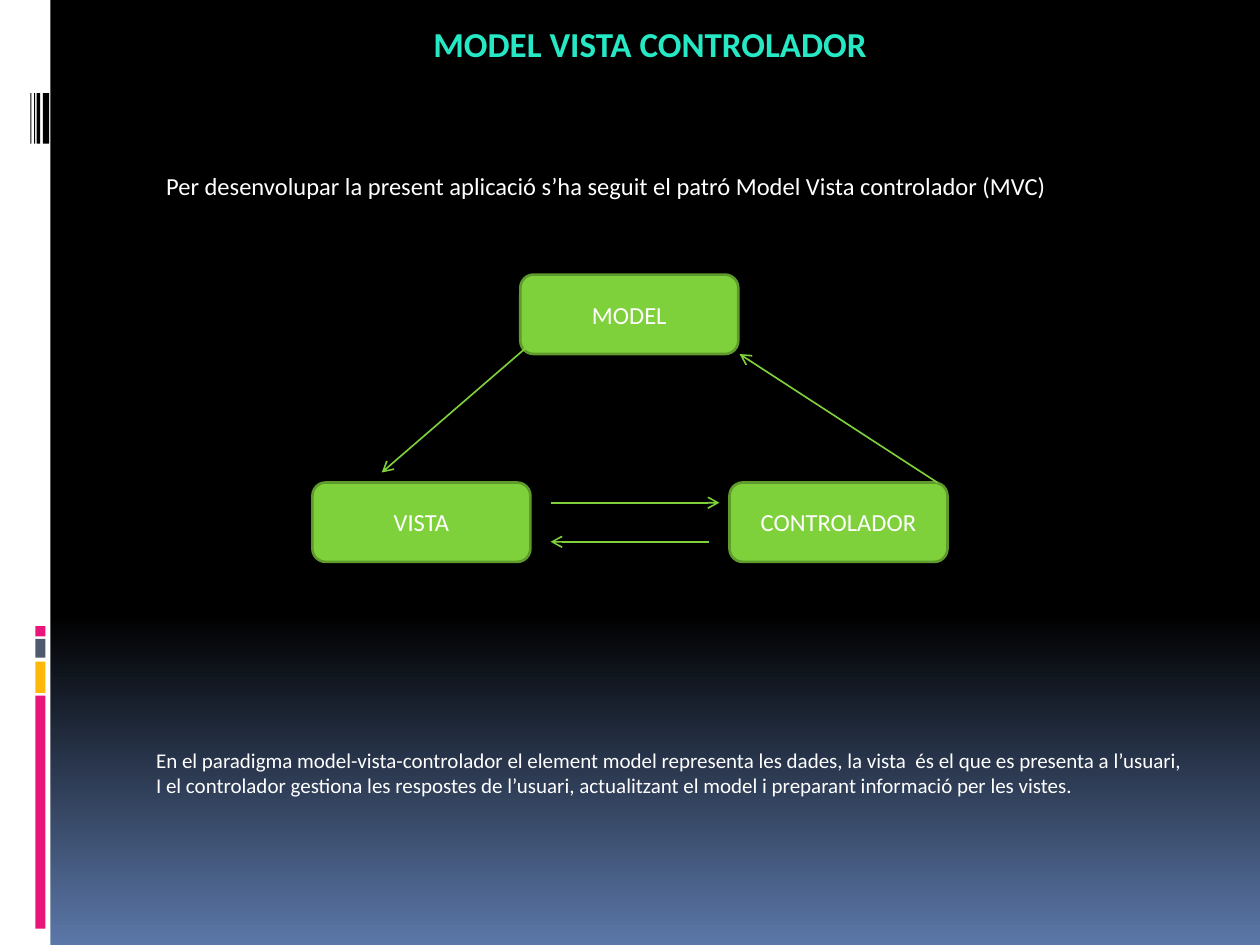
"""Builds the Model-View-Controller slide on a grid of 100 columns by 75 rows."""
from dataclasses import dataclass

from pptx import Presentation
from pptx import util as u
from pptx.dml.color import RGBColor
from pptx.enum import shapes, text
from pptx.oxml.ns import qn
from lxml import etree

CELL = u.Inches(0.1)
COLORS = {
    "black": "000000", "white": "FFFFFF", "dusk": "5B77A8", "pink": "EA157A",
    "amber": "FEB80A", "slate": "4E5B6F", "mint": "26E8C5",
    "green": "7FD13B", "moss": "5E9B2C",
}


@dataclass(frozen=True)
class Area:
    col: float
    row: float
    cols: float
    rows: float

    def place(self) -> tuple[int, ...]:
        return tuple(grid(n) for n in (self.col, self.row, self.cols, self.rows))


@dataclass(frozen=True)
class Stripe:
    area: Area
    color: str


@dataclass(frozen=True)
class Component:
    label: str
    col: float
    row: float


@dataclass(frozen=True)
class Flow:
    start: tuple[float, float]
    end: tuple[float, float]


STRIPES = [
    Stripe(Area(0, 0, 4, 75), "white"),
    *(Stripe(Area(2.8, row, 0.8, rows), color) for row, rows, color in (
        (55.2, 18.5, "pink"), (52.5, 2.5, "amber"),
        (50.7, 1.5, "slate"), (49.7, 0.8, "pink"))),
    *(Stripe(Area(col, 7.4, cols, 4), "black") for col, cols in (
        (3.4, 0.5), (2.9, 0.3), (2.7, 0.1), (2.4, 0.1))),
]
COMPONENTS = [
    Component("MODEL", 41.3, 21.8),
    Component("VISTA", 24.8, 38.3),
    Component("CONTROLADOR", 57.9, 38.3),
]
FLOWS = [
    Flow((42.1, 27.3), (30.3, 37.5)),
    Flow((74.4, 38.3), (58.7, 28.1)),
    Flow((43.7, 39.9), (57.1, 39.9)),
    Flow((56.3, 43), (43.7, 43)),
]
INTRO = ["Per desenvolupar la present aplicació s’ha seguit el patró Model Vista controlador (MVC)"]
SUMMARY = [
    "En el paradigma model-vista-controlador el element model representa les dades, "
    "la vista  és el que es presenta a l’usuari,",
    "I el controlador gestiona les respostes de l’usuari, actualitzant el model "
    "i preparant informació per les vistes.",
]


def grid(cells: float) -> int:
    return round(cells * CELL)


def rgb(color: str) -> RGBColor:
    return RGBColor.from_string(COLORS[color])


def write(frame, lines: list[str], size: int, color: str = "white", bold: bool = False,
          align=text.PP_ALIGN.LEFT, anchor=text.MSO_ANCHOR.TOP, wrap: bool = False) -> None:
    frame.text = "\n".join(lines)
    layout = {"auto_size": text.MSO_AUTO_SIZE.NONE, "word_wrap": wrap, "vertical_anchor": anchor}
    for key, value in layout.items():
        setattr(frame, key, value)
    for paragraph in frame.paragraphs:
        paragraph.alignment = align
        for run in paragraph.runs:
            for key, value in {"name": "Calibri", "size": u.Pt(size), "bold": bold}.items():
                setattr(run.font, key, value)
            run.font.color.rgb = rgb(color)


def paint_background(slide) -> None:
    fill = slide.background.fill
    fill.gradient()
    fill.gradient_angle = 270
    for stop, (position, color) in zip(fill.gradient_stops, ((0.65, "black"), (1, "dusk"))):
        stop.position = position
        stop.color.rgb = rgb(color)


def add_block(slide, kind, area: Area, color: str):
    block = slide.shapes.add_shape(kind, *area.place())
    block.shadow.inherit = False
    block.fill.solid()
    block.fill.fore_color.rgb = rgb(color)
    block.line.fill.background()
    return block


def add_component(slide, component: Component) -> None:
    area = Area(component.col, component.row, 17.3, 6.3)
    box = add_block(slide, shapes.MSO_SHAPE.ROUNDED_RECTANGLE, area, "green")
    box.line.color.rgb = rgb("moss")
    box.line.width = u.Pt(1.5)
    write(box.text_frame, [component.label], 14, align=text.PP_ALIGN.CENTER,
          anchor=text.MSO_ANCHOR.MIDDLE, wrap=True)


def add_flow(slide, flow: Flow) -> None:
    ends = (grid(n) for n in (*flow.start, *flow.end))
    arrow = slide.shapes.add_connector(shapes.MSO_CONNECTOR.STRAIGHT, *ends)
    arrow.line.color.rgb = rgb("green")
    arrow.line.width = u.Pt(0.94)
    etree.SubElement(arrow.line._get_or_add_ln(), qn("a:tailEnd"), type="arrow")
    etree.SubElement(arrow._element.spPr, qn("a:effectLst"))


def add_note(slide, area: Area, lines: list[str], size: int) -> None:
    write(slide.shapes.add_textbox(*area.place()).text_frame, lines, size)


def set_title(slide, area: Area, wording: str) -> None:
    title = slide.shapes.title
    for key, value in zip(("left", "top", "width", "height"), area.place()):
        setattr(title, key, value)
    write(title.text_frame, [wording], 20, "mint", True, text.PP_ALIGN.CENTER)


def main() -> None:
    deck = Presentation()
    deck.slide_width, deck.slide_height = grid(100), grid(75)
    slide = deck.slides.add_slide(deck.slide_layouts.get_by_name("Title Only"))
    paint_background(slide)
    for stripe in STRIPES:
        add_block(slide, shapes.MSO_SHAPE.RECTANGLE, stripe.area, stripe.color)
    set_title(slide, Area(31.1, 1.3, 41, 4.4), "MODEL VISTA CONTROLADOR")
    add_note(slide, Area(12.2, 13.1, 72.8, 3.4), INTRO, 14)
    for component in COMPONENTS:
        add_component(slide, component)
    for flow in FLOWS:
        add_flow(slide, flow)
    add_note(slide, Area(11.4, 58.8, 84.9, 5), SUMMARY, 12)
    deck.save("out.pptx")


if __name__ == "__main__":
    main()
